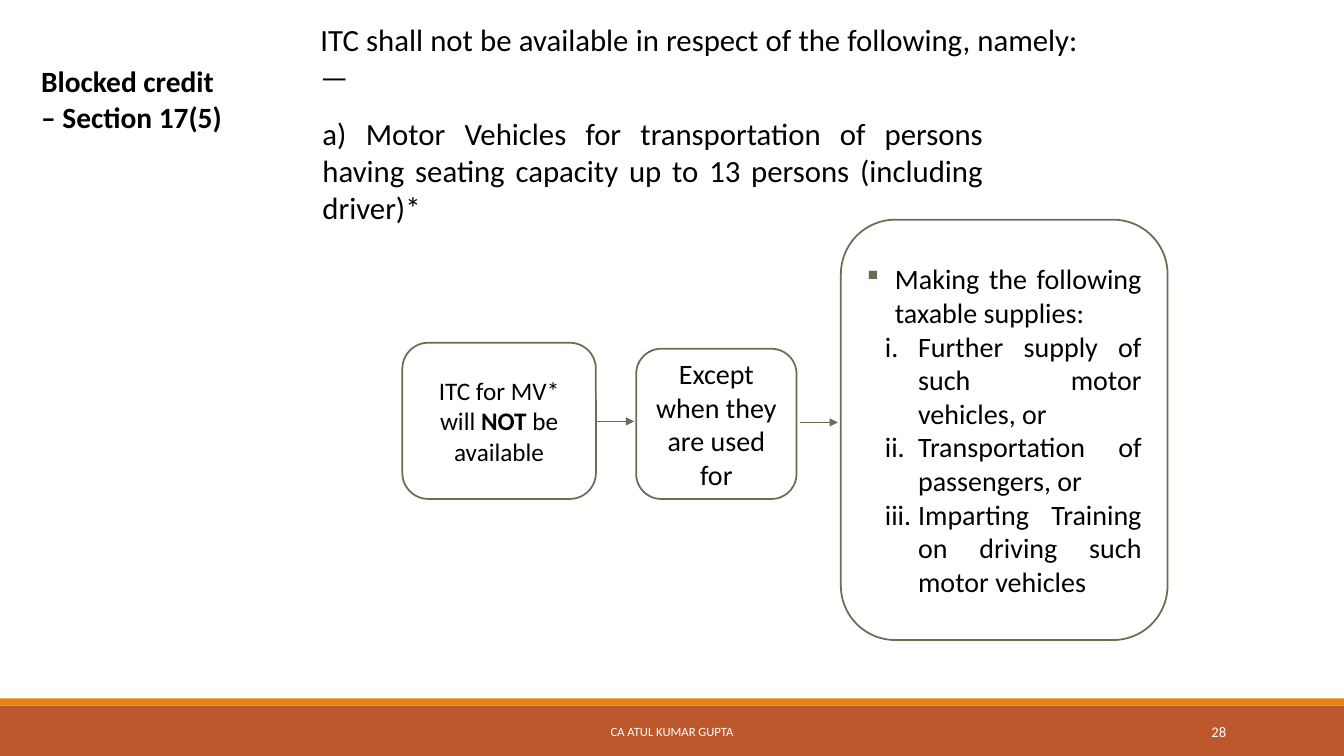
from lxml.etree import SubElement
from pptx import Presentation
from pptx.dml.color import RGBColor
from pptx.enum.shapes import MSO_CONNECTOR, MSO_SHAPE
from pptx.enum.text import MSO_ANCHOR, PP_ALIGN
from pptx.oxml.ns import qn
from pptx.util import Inches, Pt

BLACK, WHITE, OLIVE = "000000", "FFFFFF", "637052"
RUST, ORANGE = "BD582C", "E48312"


def color(hex_code):
    """Turn a hex string into a colour."""
    return RGBColor.from_string(hex_code)


def add_run(paragraph, text, size, hex_code=BLACK, bold=False):
    """Append a run in the slide's typeface."""
    run = paragraph.add_run()
    run.text = text
    formats = {"name": "Calibri", "size": Pt(size), "bold": bold}
    for key, value in formats.items():
        setattr(run.font, key, value)
    run.font.color.rgb = color(hex_code)


def add_label(slide, box, text, size, align=PP_ALIGN.LEFT, anchor=MSO_ANCHOR.TOP,
              hex_code=BLACK, bold=False, margin_top=0.05):
    """Place a wrapped one-paragraph text box."""
    frame = slide.shapes.add_textbox(*map(Inches, box)).text_frame
    formats = {"word_wrap": True, "vertical_anchor": anchor,
               "margin_top": Inches(margin_top)}
    for key, value in formats.items():
        setattr(frame, key, value)
    frame.paragraphs[0].alignment = align
    add_run(frame.paragraphs[0], text, size, hex_code, bold)


def add_band(slide, box, hex_code):
    """Draw a plain filled strip."""
    band = slide.shapes.add_shape(MSO_SHAPE.RECTANGLE, *map(Inches, box))
    band.shadow.inherit = False
    band.fill.solid()
    band.fill.fore_color.rgb = color(hex_code)
    band.line.fill.background()


def add_step(slide, box):
    """Draw an outlined rounded step and return its text frame."""
    step = slide.shapes.add_shape(MSO_SHAPE.ROUNDED_RECTANGLE, *map(Inches, box))
    step.shadow.inherit = False
    step.fill.background()
    step.line.color.rgb = color(OLIVE)
    step.line.width = Pt(1.25)
    step.text_frame.word_wrap = True
    step.text_frame.vertical_anchor = MSO_ANCHOR.MIDDLE
    step.text_frame.paragraphs[0].alignment = PP_ALIGN.CENTER
    return step.text_frame


def add_arrow(slide, left, top, length):
    """Draw a horizontal arrow pointing right."""
    arrow = slide.shapes.add_connector(
        MSO_CONNECTOR.STRAIGHT, *map(Inches, (left, top, left + length, top)))
    arrow.line.color.rgb = color(OLIVE)
    arrow.line.width = Pt(1)
    SubElement(arrow.line._get_or_add_ln(), qn("a:tailEnd"), type="triangle")
    SubElement(arrow._element.spPr, qn("a:effectLst"))


def add_item(paragraph, text, indent, hanging, numbered):
    """Fill a justified list item with a square bullet or a roman numeral."""
    paragraph.alignment = PP_ALIGN.JUSTIFY
    paragraph.level = int(numbered)
    props = paragraph._p.get_or_add_pPr()
    props.set("marL", str(Inches(indent)))
    props.set("indent", str(-Inches(hanging)))
    if numbered:
        SubElement(props, qn("a:buFont"), typeface="+mj-lt")
        SubElement(props, qn("a:buAutoNum"), type="romanLcPeriod")
    else:
        SubElement(SubElement(props, qn("a:buClr")), qn("a:srgbClr"), val=OLIVE)
        SubElement(props, qn("a:buFont"), typeface="Wingdings")
        SubElement(props, qn("a:buChar"), char="§")
    add_run(paragraph, text, 20)


def add_headings(slide, left, top):
    """Place the section title, the opening line and clause a)."""
    add_label(slide, (left, top + 0.6, 2.01, 0.8), "Blocked credit – Section 17(5)",
              21, bold=True)
    add_label(slide, (left + 2.77, top, 7.71, 7.5),
              "ITC shall not be available in respect of the following, namely:—",
              22, PP_ALIGN.JUSTIFY, margin_top=0.23)
    add_label(slide, (left + 2.79, top + 1.11, 6.75, 1.55),
              "a) Motor Vehicles for transportation of persons having seating capacity "
              "up to 13 persons (including driver)*", 22, PP_ALIGN.JUSTIFY)


def add_flow(slide, left, top):
    """Place the three steps of the rule and the arrows between them."""
    rule = add_step(slide, (left, top + 1.22, 1.92, 1.55)).paragraphs[0]
    for text, bold in (("ITC for MV* will ", False), ("NOT", True),
                       (" be available", False)):
        add_run(rule, text, 18, bold=bold)

    exception = add_step(slide, (left + 2.32, top + 1.28, 1.59, 1.49))
    add_run(exception.paragraphs[0], "Except when they are used for", 20)

    supplies = add_step(slide, (left + 4.35, top, 3.24, 4.17))
    add_item(supplies.paragraphs[0], "Making the following taxable supplies:",
             0.28, 0.28, False)
    for supply in ("Further supply of such motor vehicles, or",
                   "Transportation of passengers, or",
                   "Imparting Training on driving such motor vehicles"):
        add_item(supplies.add_paragraph(), supply, 0.51, 0.33, True)

    add_arrow(slide, left + 1.92, top + 2, 0.38)
    add_arrow(slide, left + 3.94, top + 2.01, 0.38)


def add_footer(slide, top, width):
    """Draw the bottom bands with the author and the page number."""
    add_band(slide, (0, top + 0.07, width, 0.5), RUST)
    add_band(slide, (0, top, width, 0.07), ORANGE)
    add_label(slide, (4.03, top + 0.13, 5.27, 0.4), "CA ATUL KUMAR GUPTA", 9,
              PP_ALIGN.CENTER, MSO_ANCHOR.MIDDLE, WHITE)
    add_label(slide, (10.83, top + 0.13, 1.43, 0.4), "28", 10.5,
              PP_ALIGN.RIGHT, MSO_ANCHOR.MIDDLE, WHITE)


def main():
    """Build the slide on blocked credit."""
    deck = Presentation()
    deck.slide_width, deck.slide_height = Inches(13.33), Inches(7.5)
    slide = deck.slides.add_slide(deck.slide_layouts[6])
    add_footer(slide, 6.93, 13.33)
    add_headings(slide, 0.31, -0.02)
    add_flow(slide, 3.99, 2.18)
    deck.save("out.pptx")


if __name__ == "__main__":
    main()
